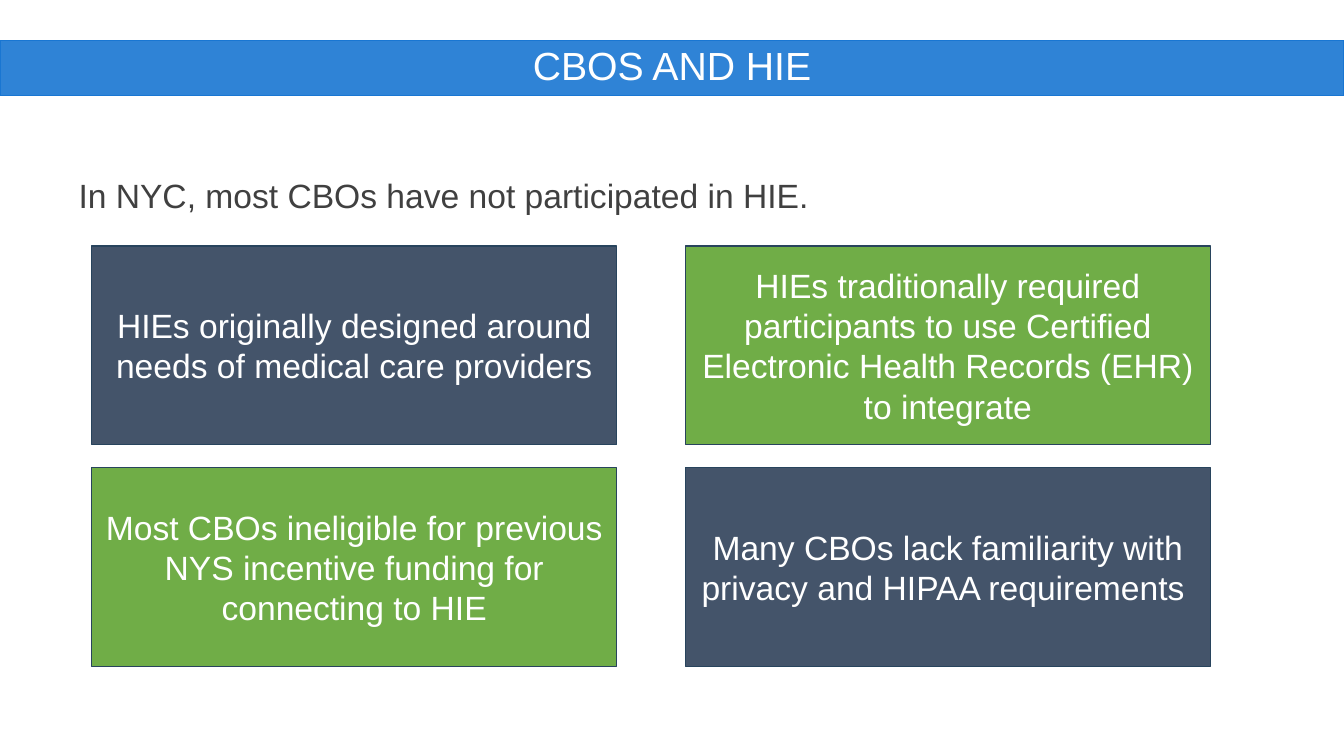
from dataclasses import dataclass

from lxml.etree import SubElement
from pptx import Presentation
from pptx.dml.color import RGBColor
from pptx.enum.shapes import MSO_SHAPE as Preset
from pptx.enum.text import MSO_ANCHOR as Anchor, MSO_AUTO_SIZE as AutoSize, PP_ALIGN as Align
from pptx.oxml.ns import qn
from pptx.slide import Slide
from pptx.text.text import TextFrame
from pptx.util import Pt


@dataclass(frozen=True)
class Theme:
    font: str = "Arial"
    title_size: float = 28
    body_size: float = 24
    banner: str = "1976D2"
    slate: str = "44546A"
    green: str = "70AD47"
    outline: str = "28445D"
    ink: str = "404040"
    white: str = "FFFFFF"


@dataclass(frozen=True)
class Barrier:
    words: str
    fill: str
    column: int
    row: int


THEME = Theme()

# Barrier grid, in points
GRID_LEFT, GRID_TOP = 65.5, 175.7
CARD_WIDTH, CARD_HEIGHT = 375, 142
COLUMN_STEP, ROW_STEP = 424, 158.4

BARRIERS = [
    Barrier("HIEs originally designed around needs of medical care providers", THEME.slate, 0, 0),
    Barrier("HIEs traditionally required participants to use Certified "
            "Electronic Health Records (EHR) to integrate", THEME.green, 1, 0),
    Barrier("Most CBOs ineligible for previous NYS incentive funding for connecting to HIE",
            THEME.green, 0, 1),
    Barrier("Many CBOs lack familiarity with privacy and HIPAA requirements ", THEME.slate, 1, 1),
]


def write(frame: TextFrame, words: str, size: float, color: str,
          align: Align, anchor: Anchor, spacing: float = 1.0) -> None:
    frame.word_wrap = True
    frame.auto_size = AutoSize.NONE
    frame.vertical_anchor = anchor
    paragraph = frame.paragraphs[0]
    paragraph.alignment = align
    paragraph.line_spacing = spacing
    run = paragraph.add_run()
    run.text = words
    run.font.name = THEME.font
    run.font.size = Pt(size)
    run.font.color.rgb = RGBColor.from_string(color)


def paint(shape, fill: str, outline: str) -> None:
    shape.fill.solid()
    shape.fill.fore_color.rgb = RGBColor.from_string(fill)
    shape.line.color.rgb = RGBColor.from_string(outline)
    shape.line.width = Pt(1)


def add_banner(slide: Slide, words: str) -> None:
    banner = slide.shapes.title
    banner.left, banner.top, banner.width, banner.height = Pt(0), Pt(28.8), Pt(960), Pt(39.6)
    paint(banner, THEME.banner, THEME.banner)
    # Slight transparency of the banner fill
    fill_color = banner.fill._xPr.find(qn("a:solidFill"))[0]
    SubElement(fill_color, qn("a:alpha"), val="90000")
    write(banner.text_frame, words, THEME.title_size, THEME.white,
          Align.CENTER, Anchor.MIDDLE, 0.9)


def add_statement(slide: Slide, words: str) -> None:
    statement = slide.shapes.add_textbox(Pt(49), Pt(107.3), Pt(865.4), Pt(342.7))
    write(statement.text_frame, words, THEME.body_size, THEME.ink,
          Align.LEFT, Anchor.TOP, 1.5)


def add_barrier(slide: Slide, barrier: Barrier) -> None:
    card = slide.shapes.add_shape(
        Preset.RECTANGLE,
        Pt(GRID_LEFT + barrier.column * COLUMN_STEP),
        Pt(GRID_TOP + barrier.row * ROW_STEP),
        Pt(CARD_WIDTH), Pt(CARD_HEIGHT))
    card.shadow.inherit = False
    paint(card, barrier.fill, THEME.outline)
    write(card.text_frame, barrier.words, THEME.body_size, THEME.white,
          Align.CENTER, Anchor.MIDDLE)


def main() -> None:
    deck = Presentation()
    deck.slide_width, deck.slide_height = Pt(960), Pt(540)
    slide = deck.slides.add_slide(deck.slide_layouts.get_by_name("Title Only"))

    # Heading and opening statement
    add_banner(slide, "CBOS AND HIE")
    add_statement(slide, "In NYC, most CBOs have not participated in HIE.")

    # Four barriers to participation
    for barrier in BARRIERS:
        add_barrier(slide, barrier)

    deck.save("out.pptx")


if __name__ == "__main__":
    main()
